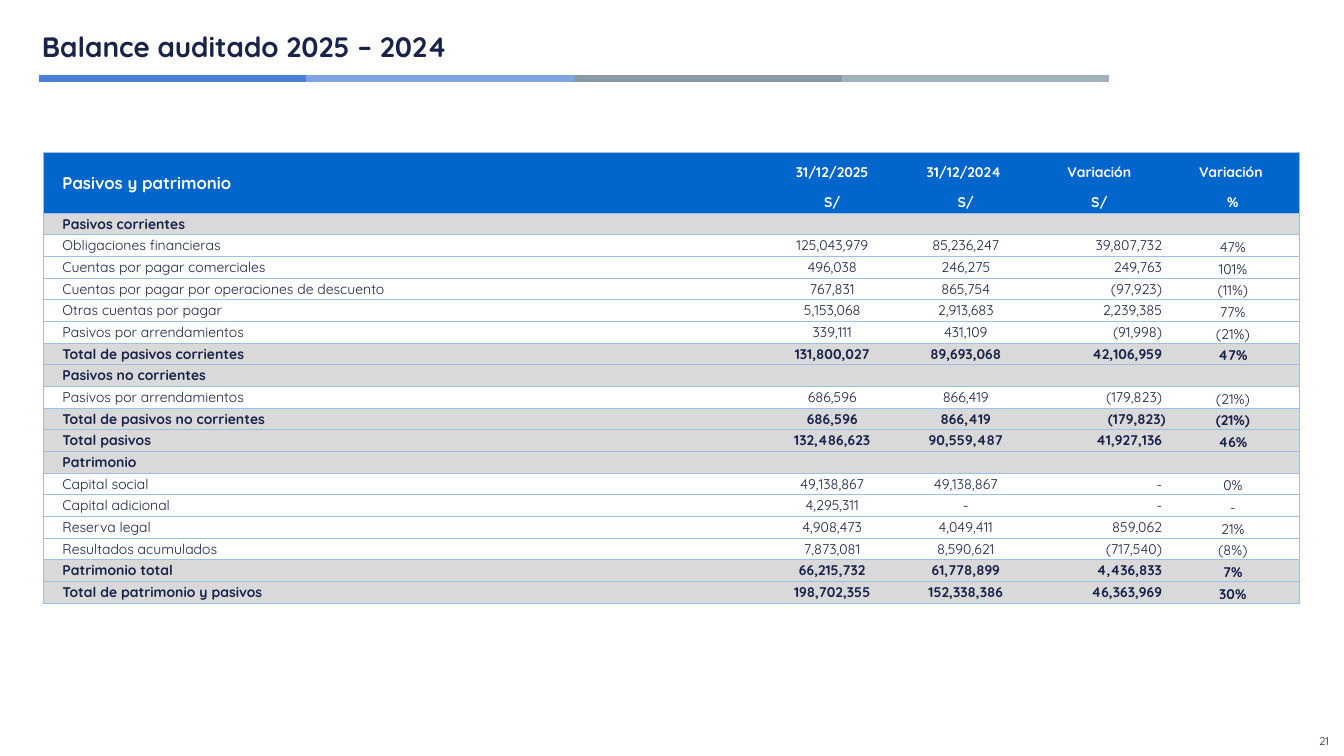
"""Build the audited balance slide: liabilities and equity, 2025 against 2024."""
from lxml import etree
from pptx import Presentation
from pptx.dml.color import RGBColor
from pptx.enum import shapes, text
from pptx.oxml import ns
from pptx.util import Inches, Pt

NAVY = RGBColor(0x19, 0x23, 0x4A)
WHITE = RGBColor(0xFF, 0xFF, 0xFF)
HEADER_BLUE = RGBColor(0x00, 0x66, 0xCC)
GREY = RGBColor(0xD9, 0xD9, 0xD9)
BORDER_BLUE = RGBColor(0x9B, 0xC2, 0xE6)
STRIPE_COLORS = [RGBColor(0x4B, 0x7E, 0xD5), RGBColor(0x7F, 0xA4, 0xE1),
                 RGBColor(0x87, 0x9A, 0xA5), RGBColor(0xA2, 0xB0, 0xB9)]

LEFT, CENTER, RIGHT = text.PP_ALIGN.LEFT, text.PP_ALIGN.CENTER, text.PP_ALIGN.RIGHT
TOP, MIDDLE, BOTTOM = text.MSO_ANCHOR.TOP, text.MSO_ANCHOR.MIDDLE, text.MSO_ANCHOR.BOTTOM
NO_GRID_STYLE = "{2D5ABB26-0587-4C30-8999-92F81FD0307C}"

COLUMN_WIDTHS = [14.34] + [2.65] * 4
HEADER_HEIGHTS = [0.79, 0.39]
BODY_HEIGHT = 0.43
HEADERS = [
    ["Pasivos y patrimonio", "31/12/2025", "31/12/2024 ", "Variación", "Variación "],
    ["", "S/", "S/", "S/", "%"],
]
SECTIONS = {"Pasivos corrientes", "Pasivos no corrientes", "Patrimonio"}
TOTALS = {"Total de pasivos corrientes", "Total de pasivos no corrientes", "Total pasivos",
          "Patrimonio total", "Total de patrimonio y pasivos"}
BALANCE = [
    ["Pasivos corrientes", "", "", "", ""],
    ["Obligaciones financieras", "125,043,979", "85,236,247", "39,807,732", "47%"],
    ["Cuentas por pagar comerciales", "496,038", "246,275", "249,763", "101%"],
    ["Cuentas por pagar por operaciones de descuento", "767,831", "865,754", "(97,923)", "(11%)"],
    ["Otras cuentas por pagar", "5,153,068", "2,913,683", "2,239,385", "77%"],
    ["Pasivos por arrendamientos", "339,111", "431,109", "(91,998)", "(21%)"],
    ["Total de pasivos corrientes", "131,800,027", "89,693,068", "42,106,959", "47%"],
    ["Pasivos no corrientes", "", "", "", ""],
    ["Pasivos por arrendamientos", "686,596", "866,419", "(179,823)", "(21%)"],
    ["Total de pasivos no corrientes", "686,596", "866,419", "(179,823)", "(21%)"],
    ["Total pasivos", "132,486,623", "90,559,487", "41,927,136", "46%"],
    ["Patrimonio", "", "", "", ""],
    ["Capital social", "49,138,867", "49,138,867", "-", "0%"],
    ["Capital adicional", "4,295,311", "-", "-", "-"],
    ["Reserva legal", "4,908,473", "4,049,411", "859,062", "21%"],
    ["Resultados acumulados", "7,873,081", "8,590,621", "(717,540)", "(8%)"],
    ["Patrimonio total", "66,215,732", "61,778,899", "4,436,833", "7%"],
    ["Total de patrimonio y pasivos", "198,702,355", "152,338,386", "46,363,969", "30%"],
]


def write_text(frame, content, *, font, size, color=NAVY, bold=False, align=LEFT):
    """Write one formatted paragraph into a text frame."""
    paragraph = frame.paragraphs[0]
    paragraph.alignment = align
    run = paragraph.add_run()
    run.text = content
    run.font.name = font
    run.font.size = Pt(size)
    run.font.bold = bold
    run.font.color.rgb = color


def add_borders(cell, sides):
    """Draw thin borders on the given sides, out of L, R, T and B."""
    properties = cell._tc.get_or_add_tcPr()
    for side in "LRTB":
        if side in sides:
            line = etree.SubElement(properties, ns.qn(f"a:ln{side}"), w=str(Pt(0.5)))
            fill = etree.SubElement(line, ns.qn("a:solidFill"))
            etree.SubElement(fill, ns.qn("a:srgbClr"), val=str(BORDER_BLUE))


class BalanceSlide:
    """Hold the font and the current slide, and add each kind of element."""

    def __init__(self, presentation, font):
        """Start a title-only slide."""
        self.font = font
        self.slide = presentation.slides.add_slide(presentation.slide_layouts[5])

    def title(self, content, left, top, width, height):
        """Place and fill the title placeholder."""
        shape = self.slide.shapes.title
        shape.left, shape.top = Inches(left), Inches(top)
        shape.width, shape.height = Inches(width), Inches(height)
        frame = shape.text_frame
        frame.word_wrap = True
        frame.auto_size = text.MSO_AUTO_SIZE.SHAPE_TO_FIT_TEXT
        frame.vertical_anchor = TOP
        write_text(frame, content, font=self.font, size=40, bold=True)

    def stripe(self, left, y, length, color):
        """Add a thick horizontal line."""
        line = self.slide.shapes.add_connector(
            shapes.MSO_CONNECTOR.STRAIGHT,
            Inches(left), Inches(y), Inches(left + length), Inches(y))
        line.line.color.rgb = color
        line.line.width = Pt(10)
        etree.SubElement(line._element.spPr, ns.qn("a:effectLst"))

    def page_number(self, content, left, top, width, height):
        """Add the page number."""
        box = self.slide.shapes.add_textbox(
            Inches(left), Inches(top), Inches(width), Inches(height))
        box.text_frame.word_wrap = True
        box.text_frame.vertical_anchor = MIDDLE
        write_text(box.text_frame, content, font=self.font, size=16, align=CENTER)

    def cell(self, cell, content, *, fill=None, borders="", anchor=MIDDLE,
             left_margin=0.01, right_margin=0.01, **text_format):
        """Format one table cell."""
        cell.margin_left, cell.margin_right = Inches(left_margin), Inches(right_margin)
        cell.margin_top, cell.margin_bottom = Inches(0.01), 0
        cell.vertical_anchor = anchor
        add_borders(cell, borders)
        if fill is None:
            cell.fill.background()
        else:
            cell.fill.solid()
            cell.fill.fore_color.rgb = fill
        if content:
            write_text(cell.text_frame, content, font=self.font, **text_format)

    def table(self, left, top):
        """Add the balance table."""
        rows = HEADERS + BALANCE
        heights = HEADER_HEIGHTS + [BODY_HEIGHT] * len(BALANCE)
        table = self.slide.shapes.add_table(
            len(rows), len(COLUMN_WIDTHS), Inches(left), Inches(top),
            Inches(sum(COLUMN_WIDTHS)), Inches(sum(heights))).table
        table._tbl.tblPr.find(ns.qn("a:tableStyleId")).text = NO_GRID_STYLE
        table.horz_banding = False
        for column, width in zip(table.columns, COLUMN_WIDTHS):
            column.width = Inches(width)
        table.cell(0, 0).merge(table.cell(1, 0))
        last_column = len(COLUMN_WIDTHS) - 1

        for row_index, (values, height) in enumerate(zip(rows, heights)):
            table.rows[row_index].height = Inches(height)
            is_header = row_index < len(HEADERS)
            is_strong = is_header or values[0] in SECTIONS | TOTALS
            fill = HEADER_BLUE if is_header else GREY if is_strong else None
            for column_index, value in enumerate(values):
                is_label = column_index == 0
                is_change = column_index == 3 and not is_header
                is_percent = column_index == last_column and not is_header
                is_flush = values[0] == "Total de pasivos no corrientes"
                borders = {0: "T", 1: "B"}.get(row_index, "TB")
                borders += {0: "L", last_column: "R"}.get(column_index, "")
                self.cell(
                    table.cell(row_index, column_index), value, fill=fill, borders=borders,
                    anchor=BOTTOM if is_percent else MIDDLE,
                    left_margin=0.39 if is_label else 0.01,
                    right_margin=0.08 if is_change and not is_flush else 0.01,
                    size=24 if is_header and is_label else 20,
                    color=WHITE if is_header else NAVY, bold=is_strong,
                    align=LEFT if is_label else RIGHT if is_change else CENTER)


def main():
    """Build and save the presentation."""
    presentation = Presentation()
    presentation.slide_width, presentation.slide_height = Inches(26.67), Inches(15)
    balance = BalanceSlide(presentation, "Quicksand")
    balance.title("Balance auditado 2025 – 2024", 0.73, 0.54, 20.33, 0.77)
    stripe_length = 5.31
    for index, color in enumerate(STRIPE_COLORS):
        balance.stripe(0.77 + index * stripe_length, 1.56, stripe_length, color)
    balance.page_number("21", 25.94, 14.52, 0.67, 0.36)
    balance.table(0.85, 3.02)
    presentation.save("out.pptx")


if __name__ == "__main__":
    main()
